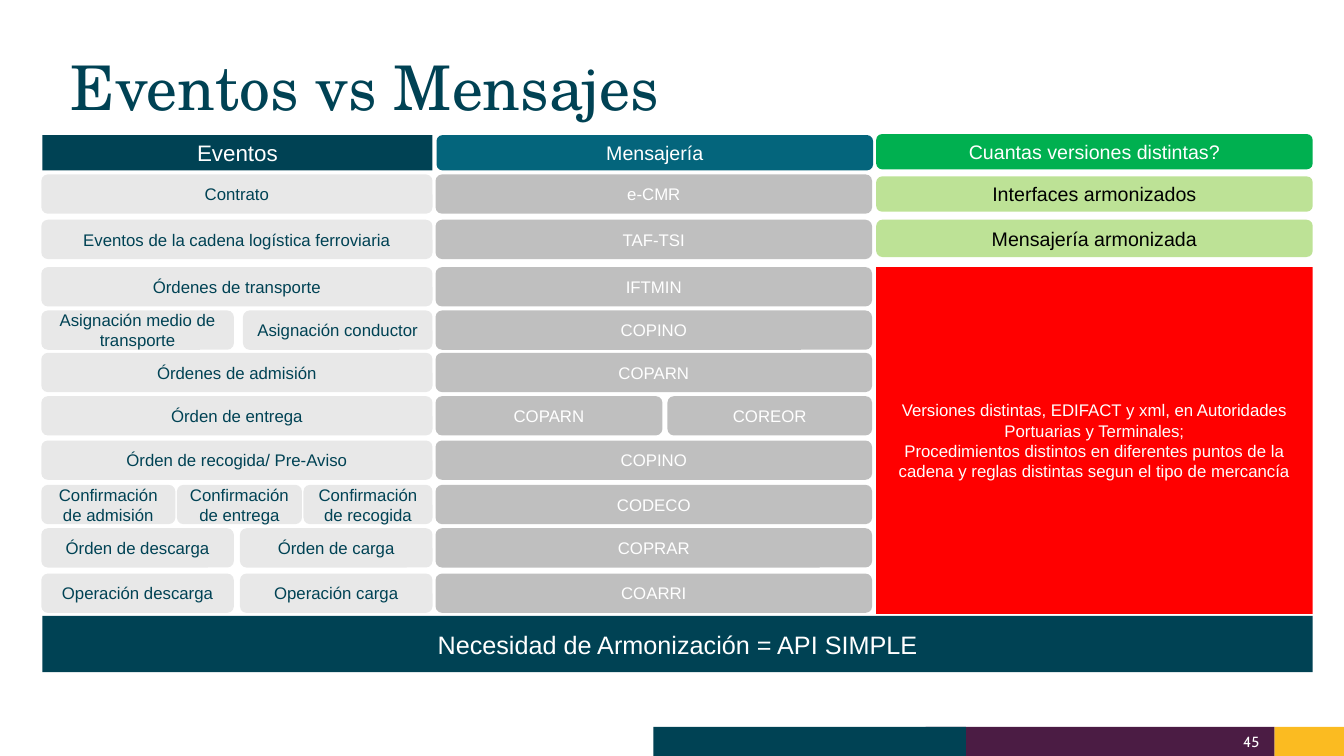
from pptx import Presentation
from pptx import util as u
from pptx.dml.color import RGBColor
from pptx.enum import shapes, text
from pptx.oxml import ns
from lxml import etree

NAVY = RGBColor(0x00, 0x42, 0x54)
TEAL = RGBColor(0x04, 0x65, 0x7C)
PURPLE = RGBColor(0x4B, 0x1C, 0x44)
YELLOW = RGBColor(0xFB, 0xBB, 0x21)
PALE_GREY = RGBColor(0xE8, 0xE8, 0xE8)
MID_GREY = RGBColor(0xBF, 0xBF, 0xBF)
GREEN = RGBColor(0x00, 0xB0, 0x50)
LIME = RGBColor(0x92, 0xD0, 0x50)
RED = RGBColor(0xFF, 0x00, 0x00)
WHITE = RGBColor(0xFF, 0xFF, 0xFF)
BLACK = RGBColor(0x00, 0x00, 0x00)

RECT = shapes.MSO_SHAPE.RECTANGLE
ROUND = shapes.MSO_SHAPE.ROUNDED_RECTANGLE
CELL_HEIGHT = 0.39

# Top of each row, its events and its messages as (text, relative width)
ROWS = [
    (1.73, [("Contrato", 3.88)], [("e-CMR", 4.33)]),
    (2.18, [("Eventos de la cadena logística ferroviaria", 3.88)], [("TAF-TSI", 4.33)]),
    (2.65, [("Órdenes de transporte", 3.88)], [("IFTMIN", 4.33)]),
    (3.08, [("Asignación medio de transporte", 1.91), ("Asignación conductor", 1.88)],
     [("COPINO", 4.33)]),
    (3.5, [("Órdenes de admisión", 3.88)], [("COPARN", 4.33)]),
    (3.93, [("Órden de entrega", 3.88)], [("COPARN", 2.25), ("COREOR", 2.03)]),
    (4.37, [("Órden de recogida/ Pre-Aviso", 3.88)], [("COPINO", 4.33)]),
    (4.81, [("Confirmación de admisión", 1.33), ("Confirmación de entrega", 1.24),
            ("Confirmación de recogida", 1.28)], [("CODECO", 4.33)]),
    (5.24, [("Órden de descarga", 1.91), ("Órden de carga", 1.91)], [("COPRAR", 4.33)]),
    (5.69, [("Operación descarga", 1.91), ("Operación carga", 1.91)], [("COARRI", 4.33)]),
]


def write(frame, *lines, size=12, color=WHITE, font="Arial",
          align=text.PP_ALIGN.CENTER, anchor=text.MSO_ANCHOR.MIDDLE, spacing=None):
    frame.word_wrap = True
    frame.auto_size = text.MSO_AUTO_SIZE.NONE
    frame.vertical_anchor = anchor
    for index, line in enumerate(lines):
        para = frame.add_paragraph() if index else frame.paragraphs[0]
        para.alignment = align
        para.line_spacing = spacing
        span = para.add_run()
        span.text = line
        span.font.size = u.Pt(size)
        span.font.name = font
        span.font.color.rgb = color


def add_block(page, kind, box, fill, *lines, opacity=None, **style):
    block = page.shapes.add_shape(kind, *map(u.Inches, box))
    block.shadow.inherit = False
    block.fill.solid()
    block.fill.fore_color.rgb = fill
    block.line.fill.background()
    if opacity:
        tint = block.fill._xPr.find(".//" + ns.qn("a:srgbClr"))
        etree.SubElement(tint, ns.qn("a:alpha")).set("val", str(opacity * 1000))
    if lines:
        write(block.text_frame, *lines, **style)
    return block


def add_footer(page, box):
    left, top, width, height = box
    for offset, across, color in [(6.16, width - 6.16, YELLOW), (2.7, 3.46, PURPLE),
                                  (0, 3.1, NAVY)]:
        add_block(page, RECT, (left + offset, top, across, height), color)
    number = page.shapes.add_textbox(*map(u.Inches, (left + 4.6, top + 0.07, 1.41, 0.15)))
    frame = number.text_frame
    frame.margin_left = frame.margin_right = frame.margin_top = frame.margin_bottom = 0
    write(frame, "45", size=10.5, font="Cabin", align=text.PP_ALIGN.RIGHT)


def add_title(page, box):
    title = page.shapes.title
    title.left, title.top, title.width, title.height = map(u.Inches, box)
    write(title.text_frame, "Eventos vs Mensajes", size=44, color=NAVY,
          font="TeX Gyre Schola", align=text.PP_ALIGN.LEFT,
          anchor=text.MSO_ANCHOR.TOP, spacing=0.9)


def add_row(page, box, cells, fill, color):
    """Spread the cells over the box with equal gaps between them."""
    left, top, width, height = box
    gap = (width - sum(cell[1] for cell in cells)) / max(len(cells) - 1, 1)
    for label, across in cells:
        add_block(page, ROUND, (left, top, across, height), fill, label, color=color)
        left += across + gap


def add_events_and_messages(page, events_left, messages_left, top):
    add_block(page, RECT, (events_left + 0.01, top, 3.87, 0.35), NAVY, "Eventos", size=16)
    add_block(page, ROUND, (messages_left + 0.01, top, 4.33, 0.35), TEAL,
              "Mensajería", size=14)
    for row_top, events, messages in ROWS:
        add_row(page, (events_left, row_top, 3.88, CELL_HEIGHT), events, PALE_GREY, NAVY)
        add_row(page, (messages_left, row_top, 4.33, CELL_HEIGHT), messages, MID_GREY, WHITE)


def add_versions(page, box):
    left, top, width, height = box
    add_block(page, ROUND, (left, top, width, 0.35), GREEN,
              "Cuantas versiones distintas?", size=14)
    for offset, tall, label in [(0.42, 0.35, "Interfaces armonizados"),
                                (0.85, 0.37, "Mensajería armonizada")]:
        add_block(page, ROUND, (left, top + offset, width, tall), LIME, label,
                  opacity=60, size=14, color=BLACK)
    add_block(page, RECT, (left, top + 1.32, width, height - 1.32), RED,
              "Versiones distintas, EDIFACT y xml, en Autoridades Portuarias y Terminales;",
              "Procedimientos distintos en diferentes puntos de la cadena y reglas distintas "
              "segun el tipo de mercancía")


def main():
    deck = Presentation()
    deck.slide_width, deck.slide_height = u.Inches(13.33), u.Inches(7.5)
    page = deck.slides.add_slide(deck.slide_layouts[5])

    # Footer band and heading
    add_footer(page, (6.48, 7.21, 6.85, 0.29))
    add_title(page, (0.6, 0.52, 6.06, 0.71))

    # Three columns
    add_events_and_messages(page, events_left=0.41, messages_left=4.32, top=1.34)
    add_versions(page, (8.69, 1.33, 4.33, 4.76))

    # Conclusion
    add_block(page, RECT, (0.42, 6.11, 12.6, 0.56), NAVY,
              "Necesidad de Armonización = API SIMPLE", size=18)
    deck.save("out.pptx")


if __name__ == "__main__":
    main()
